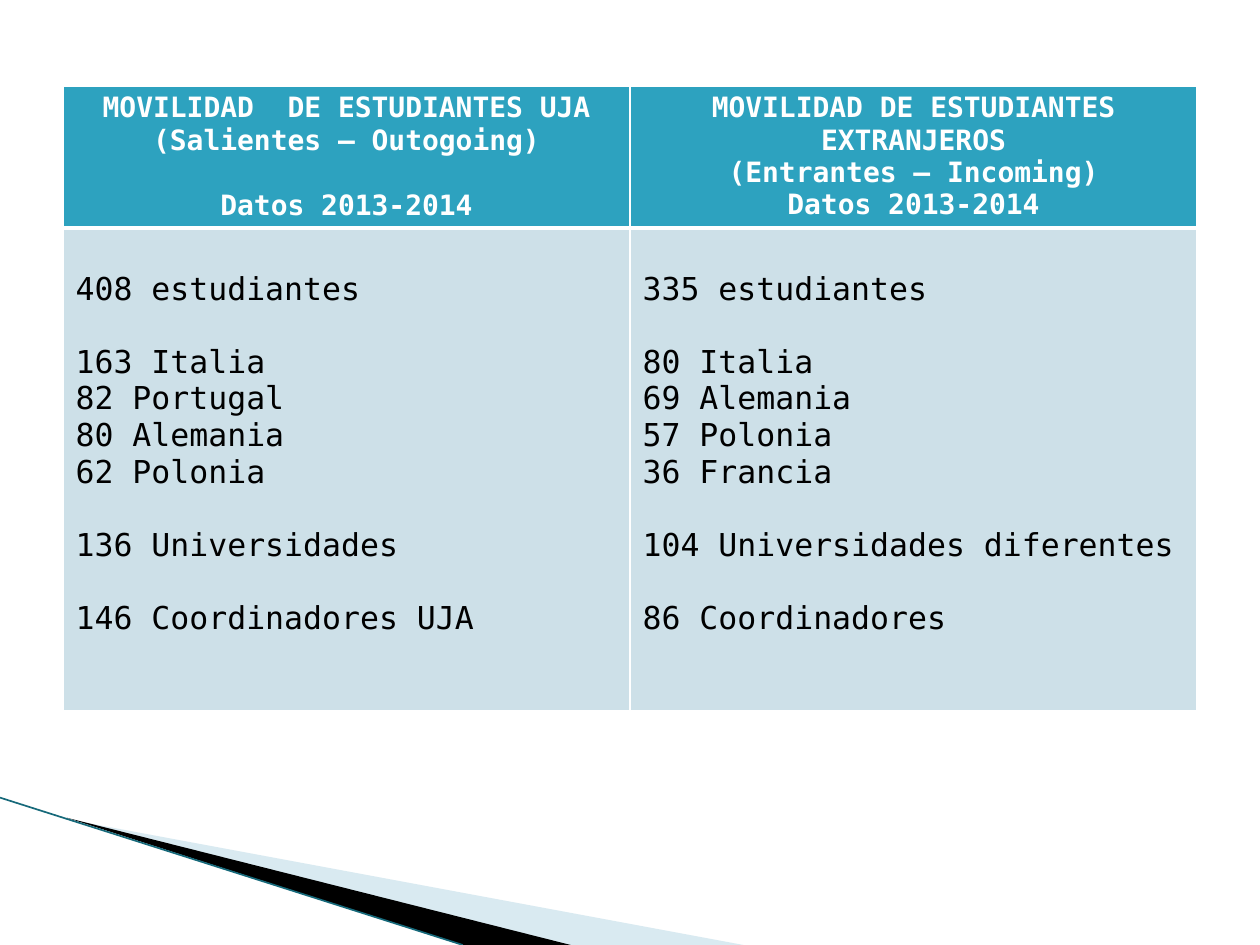
import pptx
import pptx.dml.color
import pptx.enum.shapes
import pptx.enum.text
import pptx.oxml
import pptx.oxml.ns
import pptx.util
from lxml import etree

Pt = pptx.util.Pt
qn = pptx.oxml.ns.qn

FONT = "DejaVu Sans Mono"
WHITE = "FFFFFF"
HEADERS = [
    [("MOVILIDAD  DE ESTUDIANTES UJA", 0), ("(Salientes – Outogoing)", 0), ("Datos 2013-2014", 1)],
    [("MOVILIDAD DE ESTUDIANTES EXTRANJEROS", 0), ("(Entrantes – Incoming)", 0), ("Datos 2013-2014", 0)],
]
FIGURES = [
    [["408 estudiantes"], ["163 Italia", "82 Portugal", "80 Alemania", "62 Polonia"],
     ["136 Universidades"], ["146 Coordinadores UJA"]],
    [["335 estudiantes"], ["80 Italia", "69 Alemania", "57 Polonia", "36 Francia"],
     ["104 Universidades diferentes"], ["86 Coordinadores"]],
]


def color(value):
    return pptx.dml.color.RGBColor.from_string(value)


def write_text(para, text, size=18, ink="000000", bold=False, align="LEFT", before=0):
    para.alignment = getattr(pptx.enum.text.PP_ALIGN, align)
    para.space_before = Pt(before)
    span = para.add_run()
    span.text = text
    span.font.name = FONT
    span.font.size = Pt(size)
    span.font.bold = bold
    span.font.color.rgb = color(ink)


def set_borders(cell, **widths):
    properties = cell._tc.get_or_add_tcPr()
    for side in ("L", "R", "T", "B"):
        line = etree.SubElement(properties, qn(f"a:ln{side}"), w=str(int(Pt(widths.get(side, 1)))))
        solid = etree.SubElement(line, qn("a:solidFill"))
        etree.SubElement(solid, qn("a:srgbClr"), val=WHITE)


def fill_cell(cell, lines, fill, line_height, borders, **text_format):
    set_borders(cell, **borders)
    cell.fill.solid()
    cell.fill.fore_color.rgb = color(fill)
    frame = cell.text_frame
    for index, (text, gap) in enumerate(lines):
        para = frame.add_paragraph() if index else frame.paragraphs[0]
        write_text(para, text, before=gap * line_height, **text_format)


def spaced_lines(groups):
    return [(text, int(number > 0 and index == 0))
            for number, group in enumerate(groups)
            for index, text in enumerate(group)]


def add_mobility_table(page, left, top, width, header_height, body_height):
    table = page.shapes.add_table(
        2, 2, Pt(left), Pt(top), Pt(width), Pt(header_height + body_height)).table
    table.horz_banding = False
    table.rows[0].height = Pt(header_height)
    table.rows[1].height = Pt(body_height)
    for index, (header, figures) in enumerate(zip(HEADERS, FIGURES)):
        table.columns[index].width = Pt(width / 2)
        fill_cell(table.cell(0, index), header, "2DA2BF", 18.6, {"B": 3},
                  size=16, ink=WHITE, bold=True, align="CENTER")
        body = table.cell(1, index)
        fill_cell(body, spaced_lines(figures), "CDE0E8", 20.95, {"T": 3})
        body.margin_top = Pt(24.55)


def add_wedge(page, left, top, points, fill, opacity=100):
    start, *others = [(Pt(left + x), Pt(top + y)) for x, y in points]
    builder = page.shapes.build_freeform(*start)
    builder.add_line_segments(others, close=True)
    wedge = builder.convert_to_shape()
    wedge.shadow.inherit = False
    wedge.fill.solid()
    wedge.fill.fore_color.rgb = color(fill)
    wedge.line.fill.background()
    if opacity < 100:
        tone = wedge._element.spPr.find(f".//{qn('a:srgbClr')}")
        etree.SubElement(tone, qn("a:alpha"), val=str(opacity * 1000))


def add_corner_decoration(page, left, top, width, height):
    add_wedge(page, left, top, [(39.6, 12.6), (width, height), (325.4, height)], "A0CBDC", 40)
    add_wedge(page, left, top, [(38.2, 11.5), (326.2, height), (264, height)], "000000")
    edge = page.shapes.add_connector(
        pptx.enum.shapes.MSO_CONNECTOR.STRAIGHT,
        Pt(left), Pt(top), Pt(left + 264.5), Pt(top + height))
    edge.line.color.rgb = color("16697A")
    edge.line.width = Pt(0.95)
    etree.SubElement(edge._element.spPr, qn("a:effectLst"))


def main():
    deck = pptx.Presentation()
    deck.slide_width = Pt(720)
    deck.slide_height = Pt(540)
    page = deck.slides.add_slide(deck.slide_layouts[6])
    page.background.fill.solid()
    page.background.fill.fore_color.rgb = color(WHITE)
    add_corner_decoration(page, 0, 455.8, 424.8, 84.2)
    add_mobility_table(page, 36, 49, 648, 75.6, 275.8)
    deck.save("out.pptx")


if __name__ == "__main__":
    main()
